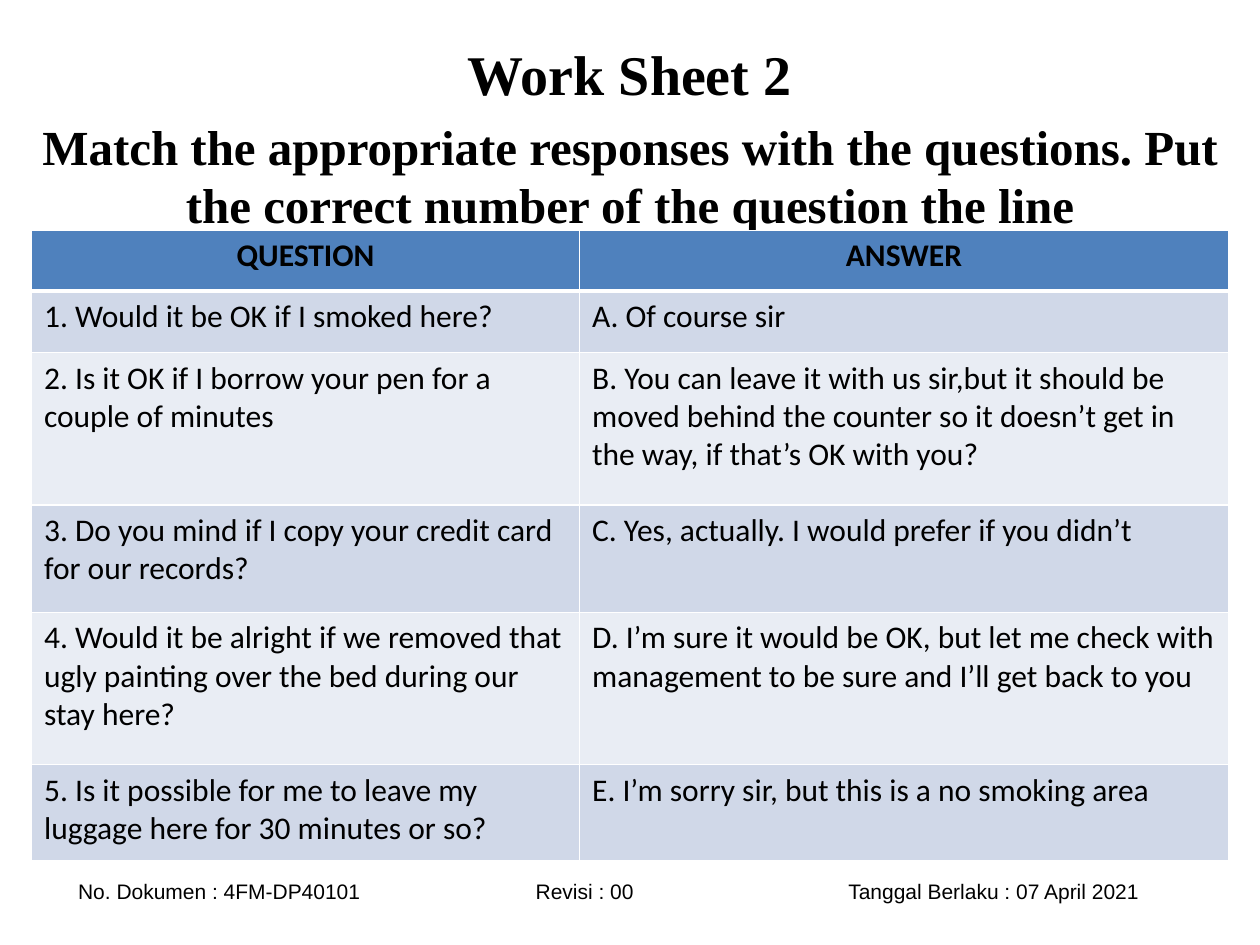
import pptx
import pptx.dml.color
import pptx.enum.text
import pptx.oxml
import pptx.oxml.ns
import pptx.util

Inches = pptx.util.Inches
Align = pptx.enum.text.PP_ALIGN
BLACK = pptx.dml.color.RGBColor(0x00, 0x00, 0x00)
HEADER_BLUE = pptx.dml.color.RGBColor(0x4F, 0x81, 0xBD)
BAND_DARK = pptx.dml.color.RGBColor(0xD0, 0xD8, 0xE8)
BAND_LIGHT = pptx.dml.color.RGBColor(0xE9, 0xED, 0xF4)

ROWS = [
    (0.48, "QUESTION", "ANSWER"),
    (0.49, "1. Would it be OK if I smoked here?", "A. Of course sir"),
    (1.21, "2. Is it OK if I borrow your pen for a couple of minutes",
     "B. You can leave it with us sir,but it should be moved behind the counter "
     "so it doesn’t get in the way, if that’s OK with you?"),
    (0.85, "3. Do you mind if I copy your credit card for our records?",
     "C. Yes, actually. I would prefer if you didn’t"),
    (1.21, "4. Would it be alright if we removed that ugly painting over the bed "
     "during our stay here?",
     "D. I’m sure it would be OK, but let me check with management to be sure "
     "and I’ll get back to you"),
    (0.76, "5. Is it possible for me to leave my luggage here for 30 minutes or so?",
     "E. I’m sorry sir, but this is a no smoking area"),
]
COLUMN_WIDTHS = (4.35, 5.15)


def write(para, text, font="Calibri", size=18, bold=False, align=Align.LEFT, before=0):
    para.alignment = align
    para.space_before = pptx.util.Pt(before)
    span = para.add_run()
    span.text = text
    span.font.name = font
    span.font.size = pptx.util.Pt(size)
    span.font.bold = bold
    span.font.color.rgb = BLACK


def add_border(cell, side, points):
    cell._tc.get_or_add_tcPr().append(pptx.oxml.parse_xml(
        f'<a:{side} {pptx.oxml.ns.nsdecls("a")} w="{pptx.util.Pt(points)}">'
        f'<a:solidFill><a:srgbClr val="FFFFFF"/></a:solidFill></a:{side}>'))


deck = pptx.Presentation()
deck.slide_width, deck.slide_height = Inches(10), Inches(7.5)
page = deck.slides.add_slide(deck.slide_layouts[0])
unused_title = page.shapes.title._element
unused_title.getparent().remove(unused_title)

# Heading and instruction
heading = page.placeholders[1]
heading.left, heading.top = 0, 0
heading.width, heading.height = deck.slide_width, Inches(1.17)
frame = heading.text_frame
frame.auto_size = pptx.enum.text.MSO_AUTO_SIZE.NONE
frame.vertical_anchor = pptx.enum.text.MSO_ANCHOR.TOP
frame.margin_top = Inches(0.31)
write(frame.paragraphs[0], "Work Sheet 2", font="Times New Roman", size=32,
      bold=True, align=Align.CENTER)
write(frame.add_paragraph(),
      "Match the appropriate responses with the questions. "
      "Put the correct number of the question the line",
      font="Times New Roman", size=28, bold=True, align=Align.CENTER, before=5.6)

# Matching table
table = page.shapes.add_table(
    len(ROWS), len(COLUMN_WIDTHS), Inches(0.25), Inches(1.83),
    Inches(sum(COLUMN_WIDTHS)), Inches(sum(row[0] for row in ROWS))).table
for column, width in zip(table.columns, COLUMN_WIDTHS):
    column.width = Inches(width)
for index, (height, *texts) in enumerate(ROWS):
    table.rows[index].height = Inches(height)
    is_header = index == 0
    band = BAND_DARK if index % 2 else BAND_LIGHT
    for number, text in enumerate(texts):
        cell = table.cell(index, number)
        for side in ("lnL", "lnR", "lnT", "lnB"):
            at_header_rule = (index, side) in ((0, "lnB"), (1, "lnT"))
            add_border(cell, side, 3 if at_header_rule else 1)
        cell.fill.solid()
        cell.fill.fore_color.rgb = HEADER_BLUE if is_header else band
        write(cell.text_frame.paragraphs[0], text, bold=is_header,
              align=Align.CENTER if is_header else Align.LEFT)

# Document footer
footer = page.shapes.add_textbox(Inches(0.2), Inches(6.92), Inches(9.45), Inches(0.3))
frame = footer.text_frame
frame.word_wrap = True
frame.vertical_anchor = pptx.enum.text.MSO_ANCHOR.MIDDLE
frame.margin_left = Inches(0.42)
para = frame.paragraphs[0]
para._p.get_or_add_pPr().append(pptx.oxml.parse_xml(
    f'<a:tabLst {pptx.oxml.ns.nsdecls("a")}>'
    f'<a:tab pos="{Inches(4.02)}" algn="ctr"/><a:tab pos="{Inches(8.42)}" algn="r"/>'
    '</a:tabLst>'))
write(para, "No. Dokumen : 4FM-DP40101\tRevisi : 00\tTanggal Berlaku : 07 April 2021",
      font="Arial", size=12)

deck.save("out.pptx")
